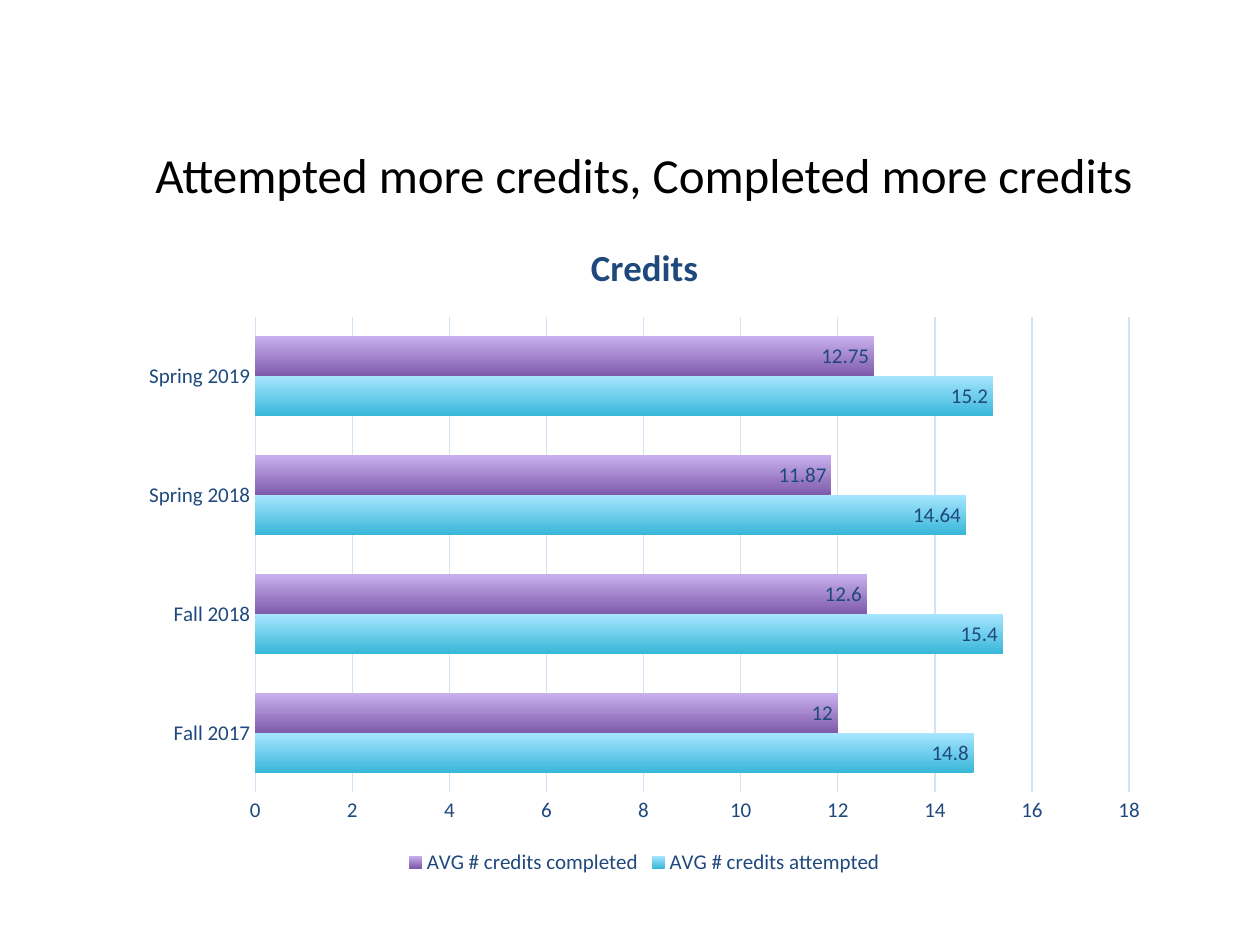
from dataclasses import dataclass

import pptx
import pptx.chart.data
import pptx.dml.color
import pptx.enum.chart
import pptx.enum.text
import pptx.util


@dataclass(frozen=True)
class Theme:
    font: str = "Calibri"
    black: str = "000000"
    navy: str = "1F497D"
    grid: str = "D4E3F4"
    title_size: int = 28
    chart_title_size: int = 21
    label_size: int = 12
    line_width: float = 0.75


THEME = Theme()
TITLE_ONLY = 5
TITLE_BOX = (0.061, 0.135, 0.9, 0.097)
CHART_BOX = (0.102, 0.228, 0.819, 0.703)
TERMS = ("Fall 2017", "Fall 2018", "Spring 2018", "Spring 2019")
# Name, values, colours from the bottom of the bar to its top
SERIES = (
    ("AVG # credits attempted", (14.8, 15.4, 14.64, 15.2), ("39B7D8", "A7E6FF")),
    ("AVG # credits completed", (12, 12.6, 11.87, 12.75), ("7F5BAB", "C8B0ED")),
)


def rgb(value):
    return pptx.dml.color.RGBColor.from_string(value)


def place(presentation, shares):
    """Turn shares of the slide's size into left, top, width and height."""
    sizes = (presentation.slide_width, presentation.slide_height) * 2
    return [int(size * share) for size, share in zip(sizes, shares)]


def format_font(font, size, color=THEME.navy, bold=False):
    font.name = THEME.font
    font.size = pptx.util.Pt(size)
    font.bold = bold
    font.color.rgb = rgb(color)


def format_line(line):
    line.color.rgb = rgb(THEME.grid)
    line.width = pptx.util.Pt(THEME.line_width)


def set_title(presentation, slide, text):
    title = slide.shapes.title
    title.left, title.top, title.width, title.height = place(presentation, TITLE_BOX)
    title.text_frame.text = text
    paragraph = title.text_frame.paragraphs[0]
    paragraph.alignment = pptx.enum.text.PP_ALIGN.CENTER
    format_font(paragraph.runs[0].font, THEME.title_size, THEME.black)


def add_bar_chart(presentation, slide):
    data = pptx.chart.data.CategoryChartData()
    data.categories = TERMS
    for name, values, _ in SERIES:
        data.add_series(name, values)
    chart = slide.shapes.add_chart(
        pptx.enum.chart.XL_CHART_TYPE.BAR_CLUSTERED,
        *place(presentation, CHART_BOX), data).chart
    format_font(chart.font, THEME.label_size)
    return chart


def format_chart_title(chart, text):
    frame = chart.chart_title.text_frame
    frame.text = text
    format_font(frame.paragraphs[0].runs[0].font, THEME.chart_title_size, bold=True)


def format_axes(chart):
    for axis in (chart.category_axis, chart.value_axis):
        axis.major_tick_mark = pptx.enum.chart.XL_TICK_MARK.NONE
        axis.minor_tick_mark = pptx.enum.chart.XL_TICK_MARK.NONE
        format_font(axis.tick_labels.font, THEME.label_size)
    format_line(chart.category_axis.format.line)
    chart.value_axis.format.line.fill.background()
    chart.value_axis.has_major_gridlines = True
    format_line(chart.value_axis.major_gridlines.format.line)


def format_legend(chart):
    chart.has_legend = True
    chart.legend.position = pptx.enum.chart.XL_LEGEND_POSITION.BOTTOM
    chart.legend.include_in_layout = False
    format_font(chart.legend.font, THEME.label_size)


def format_bars(chart):
    plot = chart.plots[0]
    plot.gap_width = 100
    plot.overlap = 0
    plot.vary_by_categories = False
    for series, (_, _, colors) in zip(plot.series, SERIES):
        series.invert_if_negative = False
        fill = series.format.fill
        fill.gradient()
        fill.gradient_angle = 90
        for position, (stop, color) in enumerate(zip(fill.gradient_stops, colors)):
            stop.position = position
            stop.color.rgb = rgb(color)
        labels = series.data_labels
        labels.show_value = True
        labels.position = pptx.enum.chart.XL_LABEL_POSITION.INSIDE_END
        format_font(labels.font, THEME.label_size)


def main():
    presentation = pptx.Presentation()
    presentation.slide_width = pptx.util.Inches(10)
    presentation.slide_height = pptx.util.Inches(7.5)
    slide = presentation.slides.add_slide(presentation.slide_layouts[TITLE_ONLY])
    set_title(presentation, slide, "Attempted more credits, Completed more credits")
    chart = add_bar_chart(presentation, slide)
    format_chart_title(chart, "Credits")
    format_axes(chart)
    format_legend(chart)
    format_bars(chart)
    presentation.save("out.pptx")


if __name__ == "__main__":
    main()
